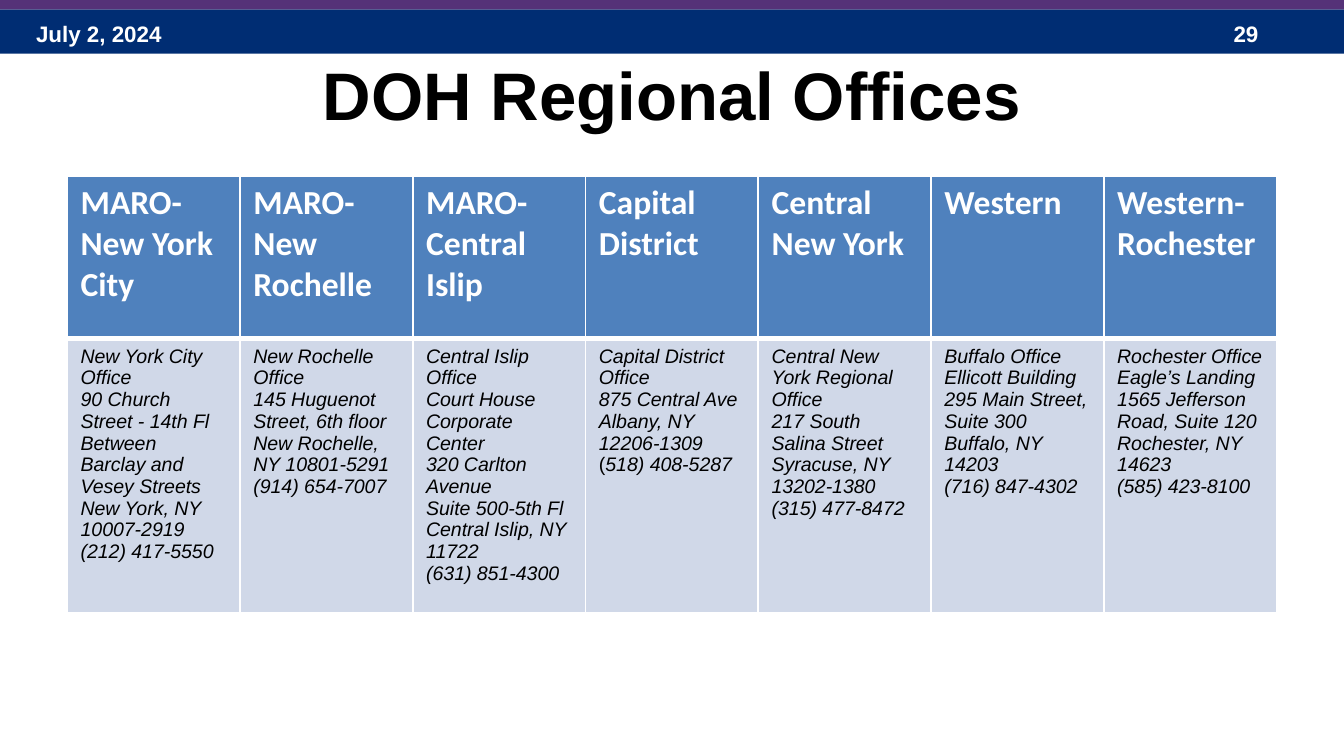
from lxml import etree
from pptx import Presentation
from pptx.dml.color import RGBColor
from pptx.enum.shapes import MSO_SHAPE
from pptx.enum.text import MSO_ANCHOR, PP_ALIGN
from pptx.oxml.ns import qn
from pptx.util import Inches, Pt

RECTANGLE = MSO_SHAPE.RECTANGLE
MIDDLE = MSO_ANCHOR.MIDDLE
CENTER = PP_ALIGN.CENTER

WHITE = RGBColor(0xFF, 0xFF, 0xFF)
BLACK = RGBColor(0, 0, 0)
NAVY = RGBColor(0x00, 0x2D, 0x73)
PURPLE = RGBColor(0x55, 0x32, 0x78)
HEADER_BLUE = RGBColor(0x4F, 0x81, 0xBD)
PALE_BLUE = RGBColor(0xD0, 0xD8, 0xE8)

TITLE = "DOH Regional Offices"
BANDS = [(0.07, 0.33, NAVY), (-0.02, 0.09, PURPLE)]
BAND_LABELS = [("July 2, 2024", 0.17, 2.33), ("29", 9.08, 0.75)]
OFFICES = [
    ("MARO-New York City", [["New York City Office", "90 Church Street - 14th Fl",
                             "Between Barclay and Vesey Streets",
                             "New York, NY 10007-2919", "(212) 417-5550"]]),
    ("MARO-New Rochelle", [["New Rochelle Office", "145 Huguenot Street, 6th floor",
                            "New Rochelle, NY 10801-5291", "(914) 654-7007"]]),
    ("MARO-Central Islip", [["Central Islip Office", "Court House Corporate Center",
                             "320 Carlton Avenue", "Suite 500-5th Fl",
                             "Central Islip, NY 11722", "(631) 851-4300"]]),
    ("Capital District", [["Capital District Office", "875 Central Ave",
                           "Albany, NY 12206-1309"], ["(518) 408-5287"]]),
    ("Central New York", [["Central New York Regional Office", "217 South Salina Street",
                           "Syracuse, NY 13202-1380", "(315) 477-8472"]]),
    ("Western", [["Buffalo Office", "Ellicott Building", "295 Main Street, Suite 300",
                  "Buffalo, NY 14203", "(716) 847-4302"]]),
    ("Western-Rochester", [["Rochester Office", "Eagle’s Landing",
                            "1565 Jefferson Road, Suite 120",
                            "Rochester, NY 14623", "(585) 423-8100"]]),
]
WIDTH, HEIGHT = 10, 5.625
MARGIN = 0.5
TABLE_TOP = 1.31
ROW_HEIGHTS = [1.21, 2.04]


def style(frame, size, name, color, bold=False, italic=False):
    for paragraph in frame.paragraphs:
        for span in paragraph.runs:
            font = span.font
            font.size, font.name, font.color.rgb = Pt(size), name, color
            font.bold, font.italic = bold, italic
        for line_break in paragraph._p.findall(qn("a:br")):
            etree.SubElement(line_break, qn("a:rPr"), sz=str(int(size * 100)))


def set_borders(cell, bottom_width):
    properties = cell._tc.get_or_add_tcPr()
    widths = {"lnL": 1, "lnR": 1, "lnT": 1, "lnB": bottom_width}
    for position, (side, width) in enumerate(widths.items()):
        line = etree.Element(qn(f"a:{side}"), w=str(Pt(width)))
        fill = etree.SubElement(line, qn("a:solidFill"))
        etree.SubElement(fill, qn("a:srgbClr"), val=str(WHITE))
        properties.insert(position, line)


def fill_cell(cell, text, color, bottom_width):
    cell.text_frame.text = text
    cell.fill.solid()
    cell.fill.fore_color.rgb = color
    set_borders(cell, bottom_width)


deck = Presentation()
deck.slide_width, deck.slide_height = Inches(WIDTH), Inches(HEIGHT)
page = deck.slides.add_slide(deck.slide_layouts[5])

for top, height, color in BANDS:
    band = page.shapes.add_shape(RECTANGLE, 0, Inches(top), Inches(WIDTH), Inches(height))
    band.shadow.inherit = False
    band.fill.solid()
    band.fill.fore_color.rgb = color
    band.line.fill.background()

for text, left, width in BAND_LABELS:
    box = page.shapes.add_textbox(Inches(left), Inches(0.1), Inches(width), Inches(0.3))
    box.text_frame.word_wrap = True
    box.text_frame.text = text
    style(box.text_frame, 12, "Arial", WHITE, bold=True)

title = page.shapes.title
title.left, title.top = Inches(MARGIN), Inches(0.23)
title.width, title.height = Inches(WIDTH - 2 * MARGIN), Inches(0.94)
title.text_frame.text = TITLE
title.text_frame.vertical_anchor = MIDDLE
title.text_frame.paragraphs[0].alignment = CENTER
style(title.text_frame, 36, "Arial", BLACK, bold=True)

table = page.shapes.add_table(
    len(ROW_HEIGHTS), len(OFFICES), Inches(MARGIN), Inches(TABLE_TOP),
    Inches(WIDTH - 2 * MARGIN), Inches(sum(ROW_HEIGHTS))).table
for row, height in zip(table.rows, ROW_HEIGHTS):
    row.height = Inches(height)

for column, (region, address) in enumerate(OFFICES):
    header, body = table.cell(0, column), table.cell(1, column)
    fill_cell(header, region, HEADER_BLUE, 3)
    style(header.text_frame, 18, "Calibri", WHITE, bold=True)
    fill_cell(body, "\n".join("\v".join(lines) for lines in address), PALE_BLUE, 1)
    phone_paragraphs = body.text_frame.paragraphs[1:]
    for paragraph in phone_paragraphs:
        number = paragraph.runs[0].text
        paragraph.runs[0].text = number[0]
        paragraph.add_run().text = number[1:]
    style(body.text_frame, 10.5, "Arial", BLACK, italic=True)
    for paragraph in phone_paragraphs:
        paragraph.runs[0].font.italic = False

deck.save("out.pptx")
